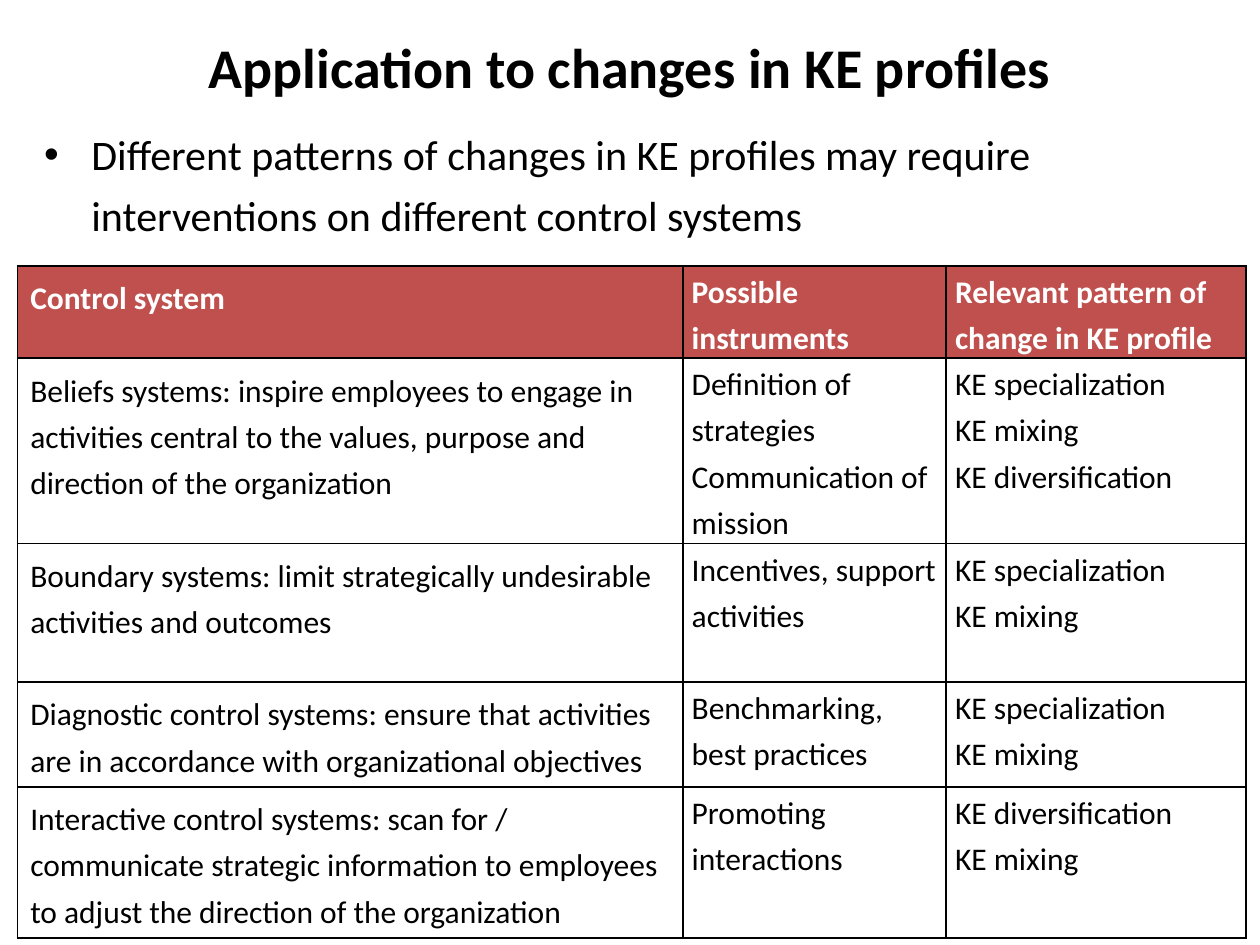
import dataclasses

import lxml.etree
import pptx
import pptx.dml.color
import pptx.enum.text
import pptx.oxml.ns
import pptx.util

Inches = pptx.util.Inches
Pt = pptx.util.Pt
Align = pptx.enum.text.PP_ALIGN
qn = pptx.oxml.ns.qn


@dataclasses.dataclass
class Theme:
    font: str = "Calibri"
    ink: str = "000000"
    light: str = "FFFFFF"
    head: str = "C0504D"
    title: float = 32
    body: float = 24
    cell: float = 18
    lead: float = 1.2
    rule: float = 1


class Deck:
    def __init__(self, theme):
        self.theme = theme
        self.prs = pptx.Presentation()
        self.prs.slide_width = Inches(10)
        self.prs.slide_height = Inches(7.5)

    def start(self):
        self.slide = self.prs.slides.add_slide(self.prs.slide_layouts[1])

    def place(self, shape, left, top, width, height):
        shape.left, shape.top = Inches(left), Inches(top)
        shape.width, shape.height = Inches(width), Inches(height)

    def style(self, frame, size, color, bold=False):
        for para in frame.paragraphs:
            for run in para.runs:
                font = run.font
                font.name, font.size, font.bold = self.theme.font, Pt(size), bold
                font.color.rgb = pptx.dml.color.RGBColor.from_string(color)

    def title(self, text, *box):
        shape = self.slide.shapes.title
        self.place(shape, *box)
        frame = shape.text_frame
        frame.text = text
        frame.vertical_anchor = pptx.enum.text.MSO_ANCHOR.MIDDLE
        frame.paragraphs[0].alignment = Align.CENTER
        self.style(frame, self.theme.title, self.theme.ink, True)

    def body(self, text, *box):
        shape = self.slide.placeholders[1]
        self.place(shape, *box)
        frame = shape.text_frame
        frame.auto_size = pptx.enum.text.MSO_AUTO_SIZE.NONE
        frame.text = text
        for para in frame.paragraphs:
            para.line_spacing = self.theme.lead
            para.space_before = Pt(0.2 * self.theme.body)
        self.style(frame, self.theme.body, self.theme.ink)

    def border(self, cell):
        """Rule all four sides; the schema wants the lines before the fill."""
        props = cell._tc.get_or_add_tcPr()
        for spot, side in enumerate(("a:lnL", "a:lnR", "a:lnT", "a:lnB")):
            line = lxml.etree.Element(qn(side), w=str(Pt(self.theme.rule)))
            fill = lxml.etree.SubElement(line, qn("a:solidFill"))
            lxml.etree.SubElement(fill, qn("a:srgbClr"), val=self.theme.ink)
            props.insert(spot, line)

    def cell(self, cell, text, head, tight):
        cell.text_frame.text = text
        for para in cell.text_frame.paragraphs:
            para.line_spacing = self.theme.lead
        color = self.theme.light if head else self.theme.ink
        self.style(cell.text_frame, self.theme.cell, color, head)
        if tight:
            cell.margin_left = cell.margin_right = Inches(0.07)
            cell.margin_top = cell.margin_bottom = 0
        if head:
            cell.fill.solid()
            cell.fill.fore_color.rgb = pptx.dml.color.RGBColor.from_string(
                self.theme.head)
        else:
            cell.fill.background()
        self.border(cell)

    def table(self, rows, left, top, widths, heights):
        table = self.slide.shapes.add_table(
            len(rows), len(widths), Inches(left), Inches(top),
            Inches(sum(widths)), Inches(sum(heights))).table
        table.first_row = table.horz_banding = False
        for col, width in zip(table.columns, widths):
            col.width = Inches(width)
        for r, (texts, height) in enumerate(zip(rows, heights)):
            table.rows[r].height = Inches(height)
            for c, text in enumerate(texts):
                self.cell(table.cell(r, c), text, r == 0, c > 0)

    def save(self):
        self.prs.save("out.pptx")


SPEC, MIX, DIV = "KE specialization", "KE mixing", "KE diversification"
ROWS = [
    ("Control system", "Possible instruments",
     "Relevant pattern of change in KE profile"),
    ("Beliefs systems: inspire employees to engage in activities central to "
     "the values, purpose and direction of the organization",
     "Definition of strategies\nCommunication of mission",
     f"{SPEC}\n{MIX}\n{DIV}"),
    ("Boundary systems: limit strategically undesirable activities and "
     "outcomes",
     "Incentives, support activities", f"{SPEC}\n{MIX}"),
    ("Diagnostic control systems: ensure that activities are in accordance "
     "with organizational objectives",
     "Benchmarking, best practices", f"{SPEC}\n{MIX}"),
    ("Interactive control systems: scan for / communicate strategic "
     "information to employees to adjust the direction of the organization",
     "Promoting interactions", f"{DIV}\n{MIX}"),
]


def main():
    deck = Deck(Theme())
    deck.start()
    deck.title("Application to changes in KE profiles", 0.5, 0.16, 9, 0.73)
    deck.body("Different patterns of changes in KE profiles may require "
              "interventions on different control systems",
              0.25, 0.89, 9.49, 6.27)
    deck.table(ROWS, 0.14, 2.11, (5.28, 2.09, 2.38),
               (0.73, 1.47, 1.1, 0.83, 1.2))
    deck.save()


if __name__ == "__main__":
    main()
